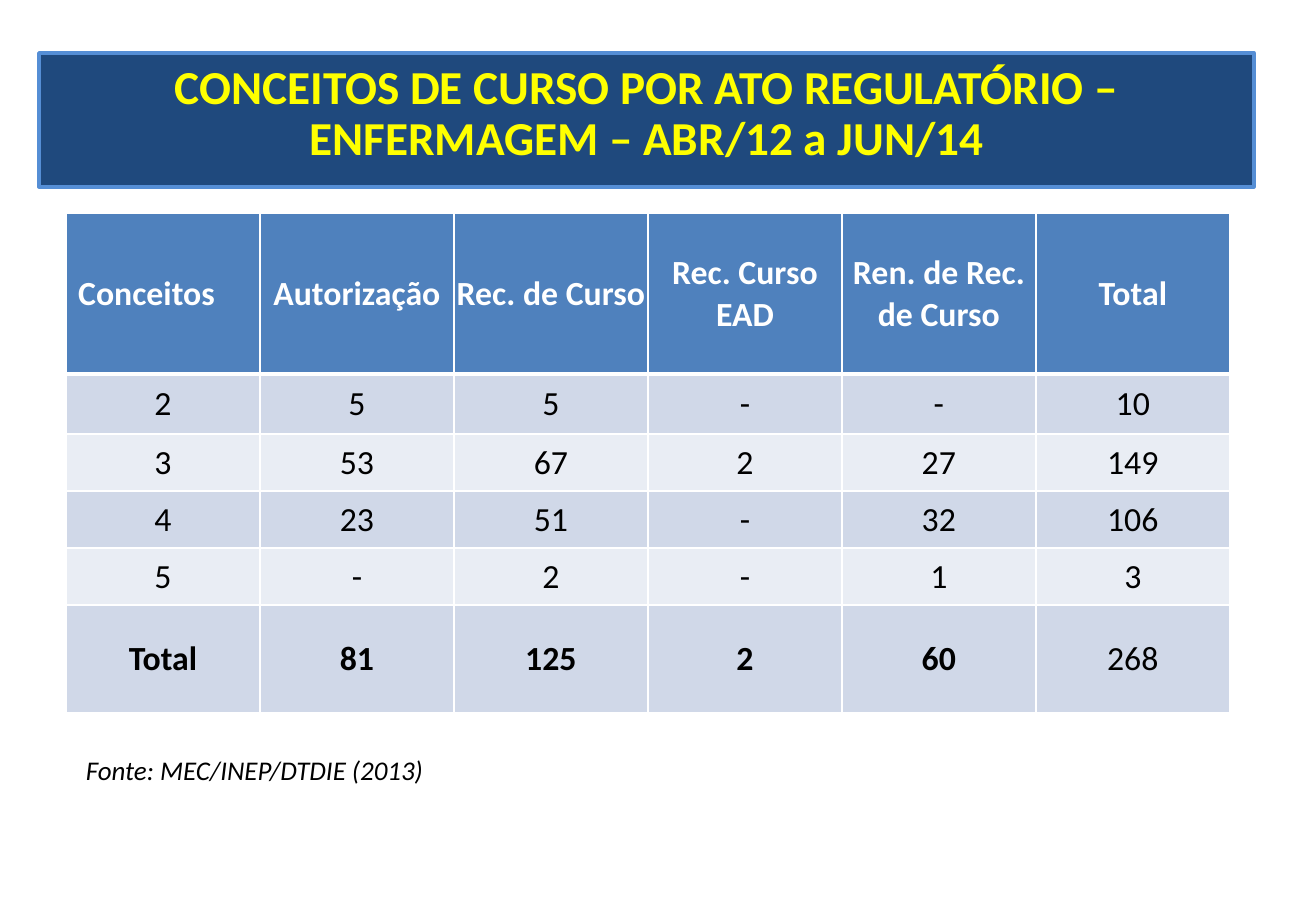
from lxml.etree import SubElement
from pptx import Presentation
from pptx.dml.color import RGBColor
from pptx.enum.text import MSO_ANCHOR, MSO_AUTO_SIZE, PP_ALIGN
from pptx.oxml.ns import qn
from pptx.util import Pt

PX = 914400 / 121.5
COLORS = {
    "white": "FFFFFF",
    "black": "000000",
    "yellow": "FFFF00",
    "navy": "1F497D",
    "outline": "558ED5",
    "header": "4F81BD",
    "dark band": "D0D8E8",
    "light band": "E9EDF4",
}
HEADERS = ["Conceitos", "Autorização", "Rec. de Curso", "Rec. Curso EAD",
           "Ren. de Rec. de Curso", "Total"]
ROWS = [
    HEADERS,
    ["2", "5", "5", "-", "-", "10"],
    ["3", "53", "67", "2", "27", "149"],
    ["4", "23", "51", "-", "32", "106"],
    ["5", "-", "2", "-", "1", "3"],
    ["Total", "81", "125", "2", "60", "268"],
]
ROW_HEIGHTS = [161, 60, 57, 57, 57, 108]
COLUMN_WIDTH = 194
LAST_ROW = len(ROWS) - 1
LAST_COLUMN = len(HEADERS) - 1


def px(*lengths):
    return [round(length * PX) for length in lengths]


def format_font(paragraph, size, color, bold=False, italic=False):
    font = paragraph.font
    font.name = "Calibri"
    font.size = Pt(size)
    font.bold = bold
    font.italic = italic
    font.color.rgb = RGBColor.from_string(COLORS[color])


presentation = Presentation()
presentation.slide_width, presentation.slide_height = px(1316, 911)
slide = presentation.slides.add_slide(presentation.slide_layouts[5])

# Title banner
title = slide.shapes.title
title.left, title.top, title.width, title.height = px(39, 53, 1215, 134)
title.fill.solid()
title.fill.fore_color.rgb = RGBColor.from_string(COLORS["navy"])
title.line.color.rgb = RGBColor.from_string(COLORS["outline"])
title.line.width = Pt(2)
title_frame = title.text_frame
title_frame.text = "CONCEITOS DE CURSO POR ATO REGULATÓRIO – ENFERMAGEM – ABR/12 a JUN/14"
title_frame.word_wrap = True
title_frame.auto_size = MSO_AUTO_SIZE.NONE
title_frame.vertical_anchor = MSO_ANCHOR.TOP
(title_frame.margin_left, title_frame.margin_top,
 title_frame.margin_right, title_frame.margin_bottom) = px(11, 11, 11, 29)
title_paragraph = title_frame.paragraphs[0]
title_paragraph.alignment = PP_ALIGN.CENTER
title_paragraph.line_spacing = 0.9
format_font(title_paragraph, 28, "yellow", bold=True)

# Table of grades by regulatory act
table = slide.shapes.add_table(
    len(ROWS), len(HEADERS),
    *px(66, 213, COLUMN_WIDTH * len(HEADERS), sum(ROW_HEIGHTS))).table
for column in table.columns:
    column.width = px(COLUMN_WIDTH)[0]

for row_index, (values, height) in enumerate(zip(ROWS, ROW_HEIGHTS)):
    table.rows[row_index].height = px(height)[0]
    is_header = row_index == 0
    band = "header" if is_header else "dark band" if row_index % 2 else "light band"
    for column_index, value in enumerate(values):
        cell = table.cell(row_index, column_index)
        cell.text = value
        cell.vertical_anchor = MSO_ANCHOR.MIDDLE
        roomy = (row_index, column_index) in [
            (0, 0), (LAST_ROW, 0), (LAST_ROW, LAST_COLUMN)]
        if not roomy:
            cell.margin_left, cell.margin_top, cell.margin_right, cell.margin_bottom = px(1, 1, 1, 0)

        paragraph = cell.text_frame.paragraphs[0]
        if (row_index, column_index) != (0, 0):
            paragraph.alignment = PP_ALIGN.CENTER
        is_bold = is_header or (row_index == LAST_ROW and column_index < LAST_COLUMN)
        format_font(paragraph, 20, "white" if is_header else "black", bold=is_bold)

        border_widths = {"lnL": 1, "lnR": 1,
                         "lnT": 3 if row_index == 1 else 1,
                         "lnB": 3 if is_header else 1}
        properties = cell._tc.get_or_add_tcPr()
        for side, width in border_widths.items():
            border = SubElement(properties, qn(f"a:{side}"), w=str(Pt(width)))
            border_fill = SubElement(border, qn("a:solidFill"))
            SubElement(border_fill, qn("a:srgbClr"), val=COLORS["white"])
        cell.fill.solid()
        cell.fill.fore_color.rgb = RGBColor.from_string(COLORS[band])

# Data source
source_frame = slide.shapes.add_textbox(*px(74, 748, 367, 45)).text_frame
source_frame.text = "Fonte: MEC/INEP/DTDIE (2013)"
source_frame.word_wrap = False
source_frame.auto_size = MSO_AUTO_SIZE.SHAPE_TO_FIT_TEXT
format_font(source_frame.paragraphs[0], 16, "black", italic=True)

presentation.save("out.pptx")
